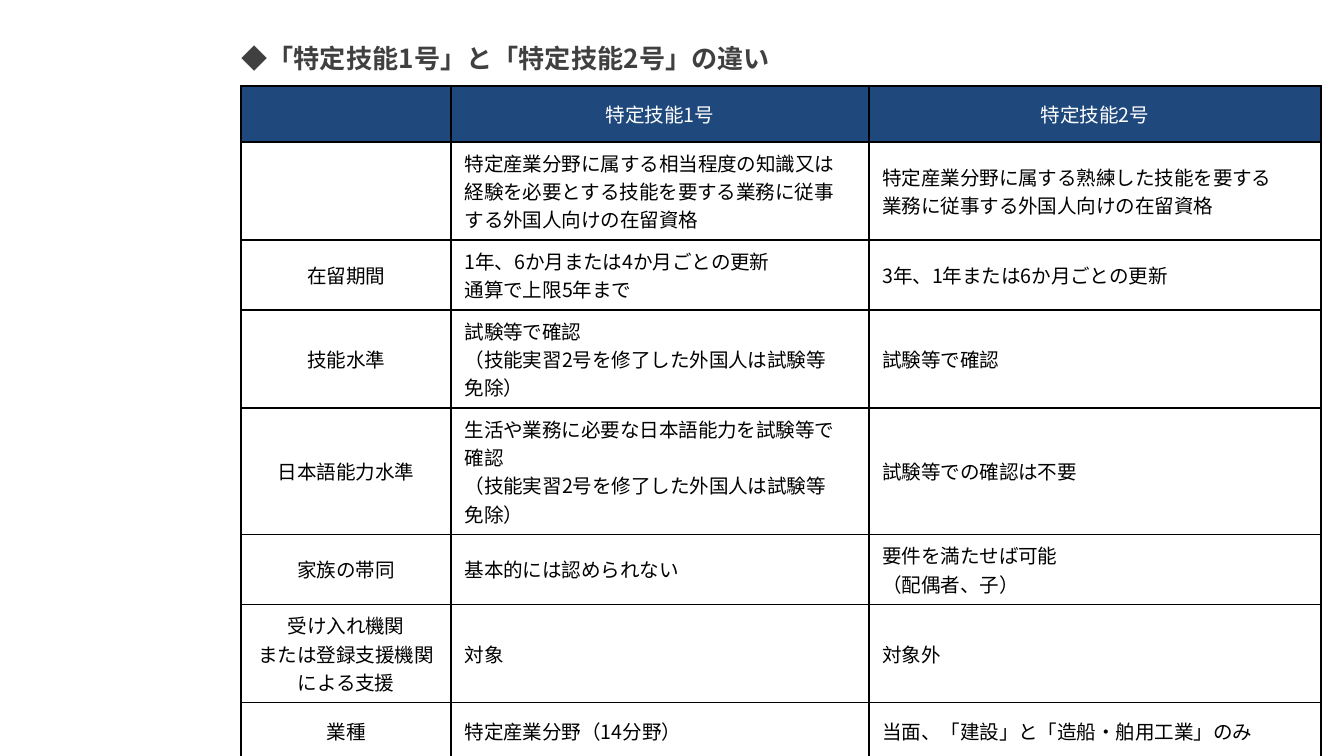
from lxml import etree
from pptx import Presentation
from pptx.dml.color import RGBColor
from pptx.enum import text
from pptx.oxml import ns
from pptx.util import Pt

FONT = "Noto Sans CJK JP"
NAVY, WHITE, BLACK, GRAY = "1F497D", "FFFFFF", "000000", "404040"

COLUMN_WIDTHS = [112.5, 223.8, 242.2]
# Row height by the largest number of text lines in the row
HEIGHT_BY_LINES = {1: 30, 2: 37.5, 3: 52.6, 4: 67.7}
ROWS = [
    ["", "特定技能1号", "特定技能2号"],
    ["",
     "特定産業分野に属する相当程度の知識又は\n経験を必要とする技能を要する業務に従事\nする外国人向けの在留資格",
     "特定産業分野に属する熟練した技能を要する\n業務に従事する外国人向けの在留資格"],
    ["在留期間",
     "1年、6か月または4か月ごとの更新\n通算で上限5年まで",
     "3年、1年または6か月ごとの更新"],
    ["技能水準",
     "試験等で確認\n（技能実習2号を修了した外国人は試験等\n免除）",
     "試験等で確認"],
    ["日本語能力水準",
     "生活や業務に必要な日本語能力を試験等で\n確認\n（技能実習2号を修了した外国人は試験等\n免除）",
     "試験等での確認は不要"],
    ["家族の帯同", "基本的には認められない", "要件を満たせば可能\n（配偶者、子）"],
    ["受け入れ機関\nまたは登録支援機関\nによる支援", "対象", "対象外"],
    ["業種", "特定産業分野（14分野）", "当面、「建設」と「造船・舶用工業」のみ"],
]


def rgb(color):
    return RGBColor.from_string(color)


def style_paragraph(paragraph, size, color, alignment, bold=False):
    paragraph.alignment = alignment
    font = paragraph.font
    font.size, font.bold, font.name = Pt(size), bold, FONT
    font.color.rgb = rgb(color)
    # East Asian typeface
    properties = paragraph._p.pPr.find(ns.qn("a:defRPr"))
    etree.SubElement(properties, ns.qn("a:ea"), typeface=FONT)


def add_borders(cell, color=BLACK, width=1):
    properties = cell._tc.get_or_add_tcPr()
    for index, side in enumerate(("lnL", "lnR", "lnT", "lnB")):
        line = etree.Element(ns.qn(f"a:{side}"), w=str(Pt(width)))
        fill = etree.SubElement(line, ns.qn("a:solidFill"))
        etree.SubElement(fill, ns.qn("a:srgbClr"), val=color)
        properties.insert(index, line)


def add_heading(slide, left, top, width, height):
    frame = slide.shapes.add_textbox(Pt(left), Pt(top), Pt(width), Pt(height)).text_frame
    frame.word_wrap = True
    frame.vertical_anchor = text.MSO_ANCHOR.MIDDLE
    frame.margin_left = frame.margin_right = Pt(7.2)
    frame.margin_top = frame.margin_bottom = Pt(7.2)
    paragraph = frame.paragraphs[0]
    paragraph.text = "◆「特定技能1号」と「特定技能2号」の違い"
    paragraph.space_after = Pt(6)
    paragraph._p.get_or_add_pPr().set("marL", str(Pt(6)))
    style_paragraph(paragraph, 14, GRAY, text.PP_ALIGN.JUSTIFY, bold=True)


def fill_cell(cell, content, is_header, is_centered):
    cell.fill.solid()
    cell.fill.fore_color.rgb = rgb(NAVY if is_header else WHITE)
    cell.vertical_anchor = text.MSO_ANCHOR.MIDDLE
    add_borders(cell)
    cell.text_frame.text = content
    alignment = text.PP_ALIGN.CENTER if is_centered else text.PP_ALIGN.LEFT
    for paragraph in cell.text_frame.paragraphs:
        style_paragraph(paragraph, 10.5, WHITE if is_header else BLACK, alignment)


def add_comparison_table(slide, left, top):
    heights = [HEIGHT_BY_LINES[max(content.count("\n") + 1 for content in contents)]
               for contents in ROWS]
    table = slide.shapes.add_table(
        len(ROWS), len(COLUMN_WIDTHS), Pt(left), Pt(top),
        Pt(sum(COLUMN_WIDTHS)), Pt(sum(heights))).table
    for column, width in zip(table.columns, COLUMN_WIDTHS):
        column.width = Pt(width)
    for row_index, (row, height) in enumerate(zip(table.rows, heights)):
        row.height = Pt(height)
        is_header = row_index == 0
        for column_index, content in enumerate(ROWS[row_index]):
            fill_cell(row.cells[column_index], content, is_header,
                      is_header or column_index == 0)


def main():
    presentation = Presentation()
    presentation.slide_width, presentation.slide_height = Pt(720), Pt(405)
    slide = presentation.slides.add_slide(presentation.slide_layouts[6])
    add_heading(slide, 116.2, 15.5, 541.5, 31)
    add_comparison_table(slide, 129.2, 46)
    presentation.save("out.pptx")


if __name__ == "__main__":
    main()
